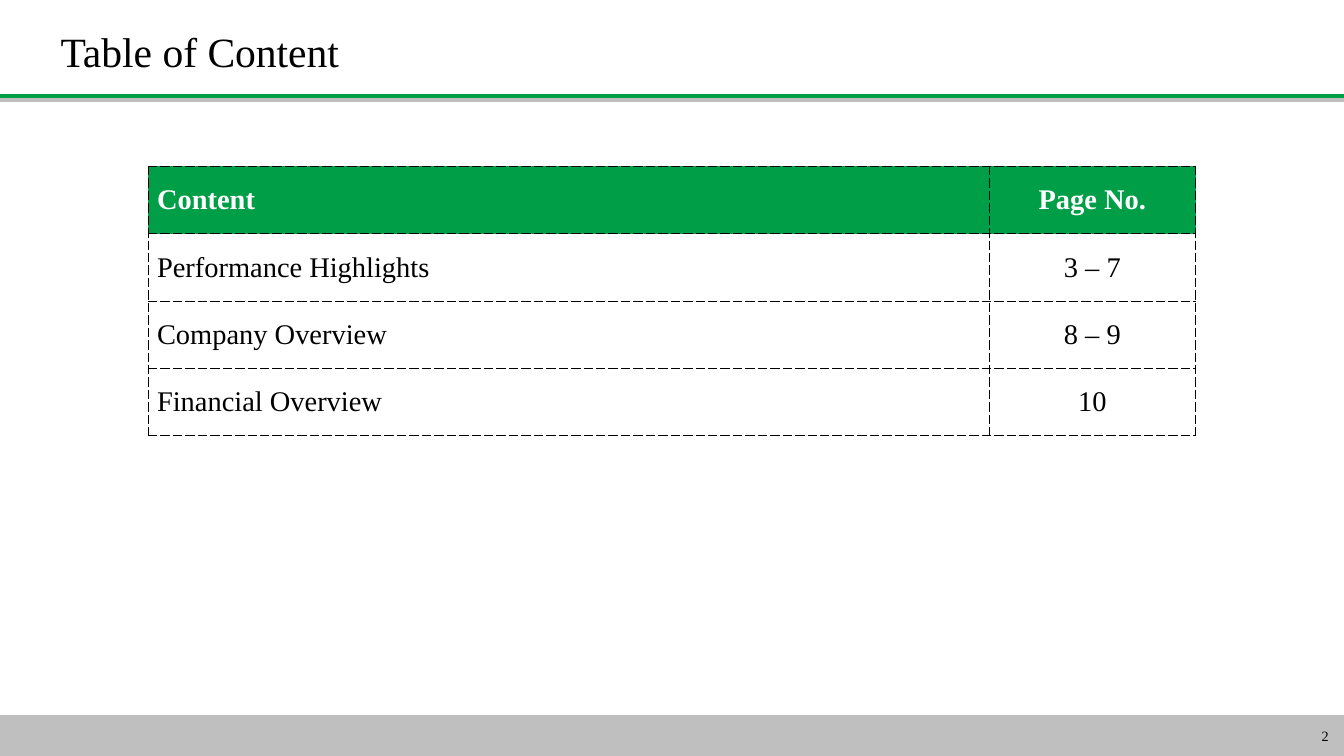
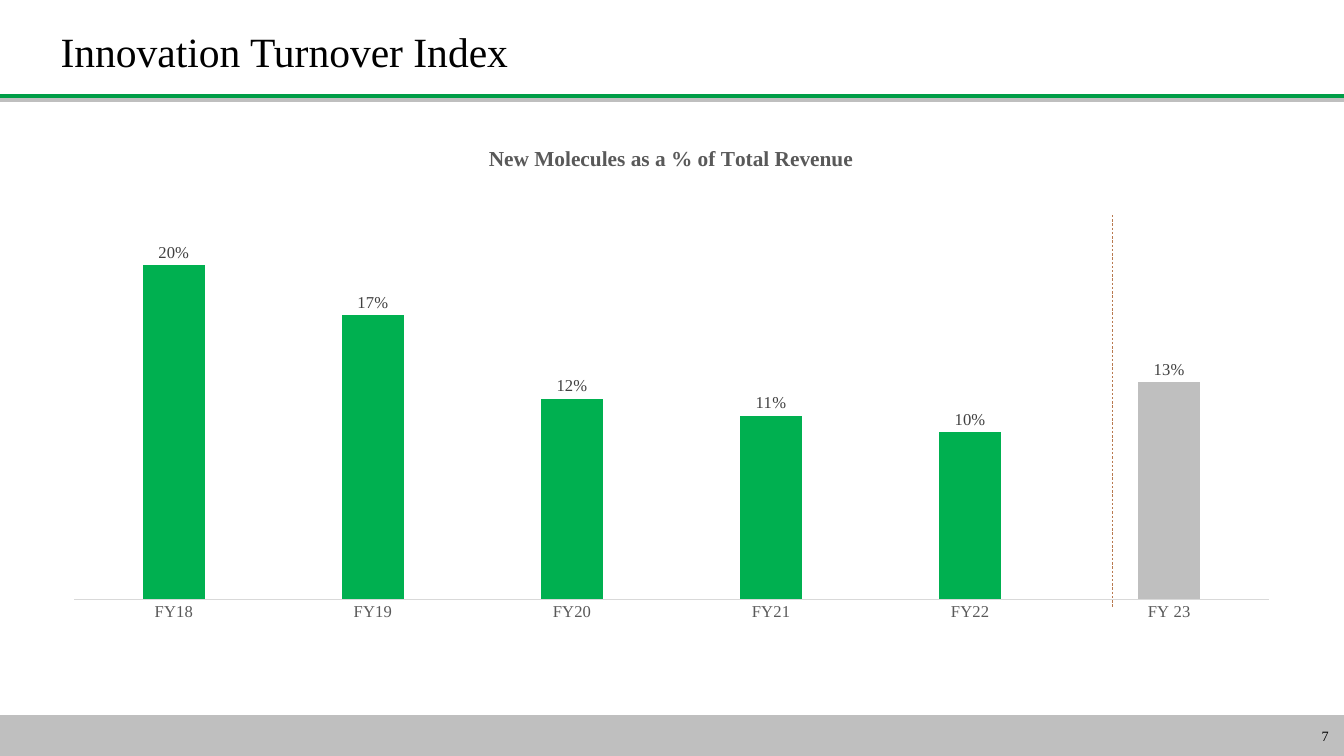
from dataclasses import dataclass

from lxml.etree import SubElement
from pptx import Presentation
from pptx.chart.chart import Chart
from pptx.chart.data import CategoryChartData
from pptx.dml.color import RGBColor
from pptx.enum.chart import XL_CHART_TYPE as ChartType
from pptx.enum.chart import XL_LABEL_POSITION as LabelPosition
from pptx.enum.chart import XL_TICK_LABEL_POSITION as TickLabelPosition
from pptx.enum.chart import XL_TICK_MARK as TickMark
from pptx.enum.dml import MSO_LINE as Dash
from pptx.enum.shapes import MSO_CONNECTOR as Connector
from pptx.enum.shapes import MSO_SHAPE as Shape
from pptx.enum.text import MSO_ANCHOR as Anchor
from pptx.enum.text import MSO_AUTO_SIZE as AutoSize
from pptx.enum.text import PP_ALIGN as Align
from pptx.oxml import parse_xml
from pptx.oxml.ns import nsdecls, qn
from pptx.slide import Slide
from pptx.table import _Cell as Cell
from pptx.text.text import TextFrame
from pptx.util import Emu, Pt

EMU_PER_PX = 9144
FONT = "Times New Roman"
COLORS = {
    "black": "000000",
    "white": "FFFFFF",
    "brand": "009E47",
    "band": "BFBFBF",
    "bar": "00B050",
    "divider": "B97A50",
    "axis": "D9D9D9",
    "axis_text": "595959",
    "label_text": "404040",
}


@dataclass(frozen=True)
class Rule:
    x1: int
    y1: int
    x2: int
    y2: int
    color: str
    width: float
    dash: Dash | None = None


@dataclass(frozen=True)
class ContentRow:
    content: str
    pages: str


@dataclass(frozen=True)
class YearShare:
    year: str
    share: float
    color: str = "bar"


HEADER_RULES = (
    Rule(-1, 113, 1578, 113, "brand", 4.5),
    Rule(-1, 117, 1578, 117, "band", 3),
)
YEAR_DIVIDER = Rule(1304, 252, 1304, 712, "divider", 0.5, Dash.DASH)
CONTENT_ROWS = (
    ContentRow("Content", "Page No."),
    ContentRow("Performance Highlights", "3 – 7"),
    ContentRow("Company Overview", "8 – 9"),
    ContentRow("Financial Overview", "10"),
)
YEAR_SHARES = (
    YearShare("FY18", 0.2),
    YearShare("FY19", 0.17),
    YearShare("FY20", 0.12),
    YearShare("FY21", 0.11),
    YearShare("FY22", 0.1),
    YearShare("FY 23", 0.13, "band"),
)


def px(length: int) -> Emu:
    return Emu(length * EMU_PER_PX)


def rgb(name: str) -> RGBColor:
    return RGBColor.from_string(COLORS[name])


def style_font(font, size: float, color: str, bold: bool = False) -> None:
    font.name = FONT
    font.size = Pt(size)
    font.bold = bold
    font.color.rgb = rgb(color)


def write_text(frame: TextFrame, text: str, *, size: float, color: str = "black",
               bold: bool = False, align: Align = Align.LEFT,
               spacing: float | None = None) -> None:
    para = frame.paragraphs[0]
    para.alignment = align
    para.line_spacing = spacing
    span = para.add_run()
    span.text = text
    style_font(span.font, size, color, bold)


def draw_rule(page: Slide, rule: Rule) -> None:
    line = page.shapes.add_connector(
        Connector.STRAIGHT, px(rule.x1), px(rule.y1), px(rule.x2), px(rule.y2))
    line.line.color.rgb = rgb(rule.color)
    line.line.width = Pt(rule.width)
    if rule.dash:
        line.line.dash_style = rule.dash
    SubElement(line._element.spPr, qn("a:effectLst"))


def draw_footer(page: Slide, number: int) -> None:
    box = page.shapes.add_shape(Shape.RECTANGLE, px(-2), px(839), px(1579), px(47))
    box.shadow.inherit = False
    box.fill.solid()
    box.fill.fore_color.rgb = rgb("band")
    box.line.color.rgb = rgb("band")
    box.line.width = Pt(0.75)
    frame = box.text_frame
    frame.vertical_anchor = Anchor.MIDDLE
    frame.margin_right = px(20)
    write_text(frame, str(number), size=12, align=Align.RIGHT)


def add_page(deck: Presentation, title: str, number: int) -> Slide:
    page = deck.slides.add_slide(deck.slide_layouts[5])
    box = page.shapes.title
    box.left, box.top, box.width, box.height = px(61), px(20), px(1361), px(86)
    frame = box.text_frame
    frame.word_wrap = True
    frame.auto_size = AutoSize.NONE
    frame.vertical_anchor = Anchor.MIDDLE
    write_text(frame, title, size=35.1, spacing=0.9)
    for rule in HEADER_RULES:
        draw_rule(page, rule)
    draw_footer(page, number)
    return page


def set_borders(cell: Cell) -> None:
    properties = cell._tc.get_or_add_tcPr()
    for side in ("lnL", "lnR", "lnT", "lnB"):
        properties.append(parse_xml(
            f'<a:{side} {nsdecls("a")} w="12700"><a:solidFill>'
            f'<a:srgbClr val="{COLORS["black"]}"/></a:solidFill>'
            f'<a:prstDash val="sysDash"/></a:{side}>'))


def draw_contents(page: Slide) -> None:
    table = page.shapes.add_table(
        len(CONTENT_ROWS), 2, px(174), px(195), px(1227), px(79 * len(CONTENT_ROWS))).table
    table.first_row = table.horz_banding = False
    for column, width in zip(table.columns, (985, 242)):
        column.width = px(width)
    for index, row in enumerate(CONTENT_ROWS):
        header = index == 0
        aligned = ((row.content, Align.LEFT), (row.pages, Align.CENTER))
        for column, (text, align) in enumerate(aligned):
            cell = table.cell(index, column)
            cell.vertical_anchor = Anchor.MIDDLE
            set_borders(cell)
            if header:
                cell.fill.solid()
                cell.fill.fore_color.rgb = rgb("brand")
            else:
                cell.fill.background()
            write_text(cell.text_frame, text, size=24, bold=header, align=align,
                       color="white" if header else "black")


def set_layout(parent, index: int, inner: bool = False, **fractions: float) -> None:
    for old in parent.findall(qn("c:layout")):
        parent.remove(old)
    target = '<c:layoutTarget val="inner"/>' if inner else ""
    modes = "".join(f'<c:{key}Mode val="edge"/>' for key in ("x", "y"))
    values = "".join(f'<c:{key} val="{value}"/>' for key, value in fractions.items())
    parent.insert(index, parse_xml(
        f'<c:layout {nsdecls("c")}><c:manualLayout>{target}{modes}{values}'
        '</c:manualLayout></c:layout>'))


def format_axes(chart: Chart) -> None:
    years, shares = chart.category_axis, chart.value_axis
    for axis in (years, shares):
        axis.major_tick_mark = axis.minor_tick_mark = TickMark.NONE
        axis.has_major_gridlines = False
    style_font(years.tick_labels.font, 14, "axis_text")
    years.format.line.color.rgb = rgb("axis")
    years.format.line.width = Pt(0.75)
    shares.minimum_scale, shares.maximum_scale = 0, 0.25
    shares.tick_label_position = TickLabelPosition.NONE
    shares.format.line.fill.background()


def draw_share_chart(page: Slide) -> None:
    data = CategoryChartData(number_format="0%")
    data.categories = [item.year for item in YEAR_SHARES]
    data.add_series("Series 1", [item.share for item in YEAR_SHARES])
    chart = page.shapes.add_chart(
        ChartType.COLUMN_CLUSTERED, px(58), px(148), px(1458), px(590), data).chart
    style_font(chart.font, 10, "black")
    chart.font._element.getparent().getparent().addprevious(parse_xml(
        f'<c:spPr {nsdecls("c", "a")}><a:noFill/><a:ln><a:noFill/></a:ln></c:spPr>'))
    chart.has_legend = False
    chart.has_title = True
    write_text(chart.chart_title.text_frame, "New Molecules as a % of Total Revenue",
               size=18, color="axis_text", bold=True, align=Align.CENTER)
    set_layout(chart.chart_title._element, 1, x=0.35, y=0.03)
    set_layout(chart._chartSpace.chart.plotArea, 0, inner=True, x=0.02, y=0.11, w=0.96, h=0.83)
    format_axes(chart)

    plot = chart.plots[0]
    plot.vary_by_categories = False
    plot.gap_width, plot.overlap = 219, -27
    series = plot.series[0]
    series.format.fill.solid()
    series.format.fill.fore_color.rgb = rgb("bar")
    for index, item in enumerate(YEAR_SHARES):
        if item.color != "bar":
            fill = series.points[index].format.fill
            fill.solid()
            fill.fore_color.rgb = rgb(item.color)
    labels = series.data_labels
    labels.show_value = True
    labels.number_format, labels.number_format_is_linked = "0%", False
    labels.position = LabelPosition.OUTSIDE_END
    style_font(labels.font, 14, "label_text")


def main() -> None:
    deck = Presentation()
    deck.slide_width, deck.slide_height = px(1575), px(886)
    draw_contents(add_page(deck, "Table of Content", 2))
    index_page = add_page(deck, "Innovation Turnover Index", 7)
    draw_rule(index_page, YEAR_DIVIDER)
    draw_share_chart(index_page)
    deck.save("out.pptx")


if __name__ == "__main__":
    main()
